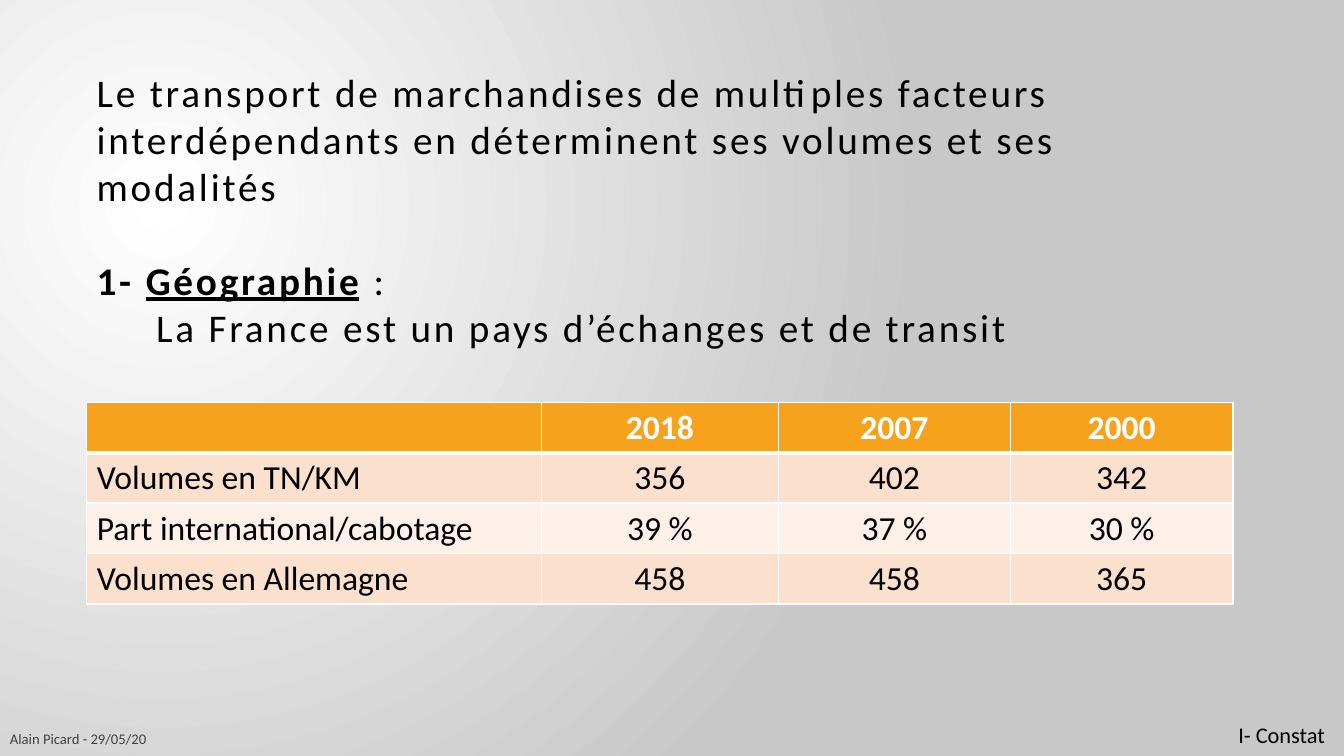
from lxml.etree import SubElement
from pptx import Presentation
from pptx.dml.color import RGBColor
from pptx.enum.text import MSO_ANCHOR as Anchor, PP_ALIGN as Align
from pptx.oxml.ns import qn
from pptx.util import Inches, Pt

COLOURS = {
    "white": "FFFFFF", "grey": "C8C8C8", "black": "000000",
    "header": "F6A21D", "band_dark": "FBE0CD", "band_light": "FDF0E8",
}
WIDTH, HEIGHT = Inches(13.33), Inches(7.5)


def share(left, top, width, height):
    return [round(part * size / 100) for part, size in
            zip((left, top, width, height), (WIDTH, HEIGHT) * 2)]


def write(paragraph, text, colour="black", **formats):
    run = paragraph.add_run()
    run.text = text
    run.font.color.rgb = RGBColor.from_string(COLOURS[colour])
    for key, value in ({"name": "Calibri"} | formats).items():
        setattr(run.font, key, value)
    return run


deck = Presentation()
deck.slide_width, deck.slide_height = WIDTH, HEIGHT
slide = deck.slides.add_slide(deck.slide_layouts[6])

backdrop = slide.background.fill
backdrop.gradient()
for stop, position, colour in zip(backdrop.gradient_stops, (0, 1), ("white", "grey")):
    stop.position = position
    stop.color.rgb = RGBColor.from_string(COLOURS[colour])
gradient = slide.background._cSld.find(".//" + qn("a:gradFill"))
gradient.remove(gradient.find(qn("a:lin")))
glow = SubElement(gradient, qn("a:path"), {"path": "circle"})
SubElement(glow, qn("a:fillToRect"), {"l": "50000", "t": "55000", "r": "125000", "b": "100000"})

heading = slide.shapes.add_textbox(*share(6.45, 8.13, 85.3, 39.07)).text_frame
heading.word_wrap = True
heading.vertical_anchor = Anchor.MIDDLE
statement, geography = heading.paragraphs[0], heading.add_paragraph()
geography.space_before = Pt(33.6)
hanging = Inches(0.59)
for key, value in {"marL": hanging, "indent": -hanging}.items():
    geography._p.get_or_add_pPr().set(key, str(value))
for paragraph, text, formats in (
    (statement, "Le transport de marchandises de multiples facteurs interdépendants "
                "en déterminent ses volumes et ses modalités", {}),
    (geography, "1- ", {"bold": True}),
    (geography, "Géographie", {"bold": True, "underline": True}),
    (geography, " :", {}),
    (geography, None, {}),
    (geography, "La France est un pays d’échanges et de transit", {}),
):
    if text is None:
        paragraph.add_line_break()
        continue
    run = write(paragraph, text, size=Pt(28), **formats)
    run.font._element.set("spc", "200")

volumes = (
    ("", "2018", "2007", "2000"),
    ("Volumes en TN/KM", "356", "402", "342"),
    ("Part international/cabotage", "39 %", "37 %", "30 %"),
    ("Volumes en Allemagne", "458", "458", "365"),
)
row_fills = ("header", "band_dark", "band_light", "band_dark")
table_area = share(6.45, 53.2, 85.3, 26.67)
table = slide.shapes.add_table(len(volumes), len(volumes[0]), *table_area).table
table.first_row = table.horz_banding = False
for column, portion in zip(table.columns, (39.67, 20.67, 20.23, 19.43)):
    column.width = round(table_area[2] * portion / 100)

for r, (values, row_fill) in enumerate(zip(volumes, row_fills)):
    for c, value in enumerate(values):
        cell = table.cell(r, c)
        properties = cell._tc.get_or_add_tcPr()
        for side in "LRTB":
            heavy = (r, side) in ((0, "B"), (1, "T"))
            border = SubElement(properties, qn("a:ln" + side), {"w": str(Pt(3 if heavy else 1))})
            SubElement(SubElement(border, qn("a:solidFill")), qn("a:srgbClr"),
                       {"val": COLOURS["white"]})
        cell.fill.solid()
        cell.fill.fore_color.rgb = RGBColor.from_string(COLOURS[row_fill])
        entry = cell.text_frame.paragraphs[0]
        entry.alignment = Align.CENTER if c else Align.LEFT
        if value:
            write(entry, value, "black" if r else "white", size=Pt(24), bold=r == 0)
        else:
            entry.font.size = Pt(24)

for area, text, size, alignment, anchor, opacity in (
    ((0, 95.47, 48.39, 4.53), "Alain Picard - 29/05/20", 10.5, Align.LEFT, Anchor.MIDDLE, 70),
    ((75.39, 94.67, 23.93, 4.93), "I- Constat", 16, Align.RIGHT, Anchor.TOP, 100),
):
    footer = slide.shapes.add_textbox(*share(*area)).text_frame
    footer.word_wrap = True
    footer.vertical_anchor = anchor
    footer.paragraphs[0].alignment = alignment
    run = write(footer.paragraphs[0], text, size=Pt(size))
    if opacity < 100:
        ink = run.font._element.find(".//" + qn("a:srgbClr"))
        SubElement(ink, qn("a:alpha"), {"val": str(opacity * 1000)})

deck.save("out.pptx")
